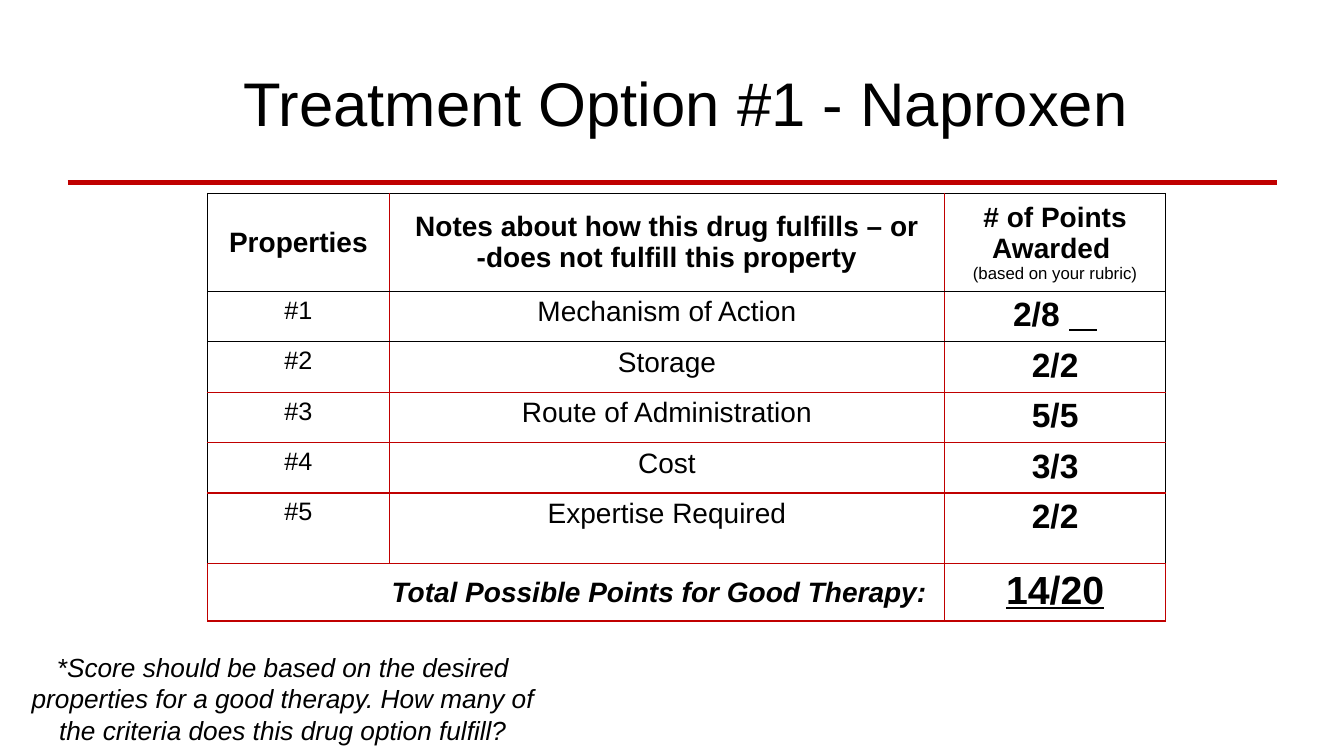
import pptx
import pptx.util
import pptx.dml.color
import pptx.enum.shapes
import pptx.enum.text
import pptx.oxml
import pptx.oxml.ns
import lxml.etree

Inches = pptx.util.Inches
ALIGN = pptx.enum.text.PP_ALIGN
ANCHOR = pptx.enum.text.MSO_ANCHOR
COLORS = {"text": "000000", "accent": "C00000"}


def add_run(paragraph, text, size, bold=False, italic=False, underline=False, align=ALIGN.CENTER):
    paragraph.alignment = align
    run = paragraph.add_run()
    run.text = text
    run.font.name = "Arial"
    run.font.size = pptx.util.Pt(size)
    run.font.bold = bold
    run.font.italic = italic
    run.font.underline = underline
    run.font.color.rgb = pptx.dml.color.RGBColor.from_string(COLORS["text"])


def add_border(cell, side, color):
    properties = cell._tc.get_or_add_tcPr()
    line = lxml.etree.SubElement(properties, pptx.oxml.ns.qn("a:" + side), w="12700")
    fill = lxml.etree.SubElement(line, pptx.oxml.ns.qn("a:solidFill"))
    lxml.etree.SubElement(fill, pptx.oxml.ns.qn("a:srgbClr"), val=COLORS[color])


presentation = pptx.Presentation()
presentation.slide_width = Inches(13.33)
presentation.slide_height = Inches(7.5)
slide = presentation.slides.add_slide(presentation.slide_layouts[6])

rule = slide.shapes.add_connector(
    pptx.enum.shapes.MSO_CONNECTOR.STRAIGHT, Inches(0.67), Inches(1.81), Inches(12.67), Inches(1.81))
rule.line.color.rgb = pptx.dml.color.RGBColor.from_string(COLORS["accent"])
rule.line.width = pptx.util.Pt(3)
lxml.etree.SubElement(rule._element.spPr, pptx.oxml.ns.qn("a:effectLst"))

text_boxes = [
    (1.41, 0.57, 10.79, 0.88, ANCHOR.MIDDLE, "Treatment Option #1 - Naproxen", 44, False),
    (0.12, 6.41, 5.37, 1.05, ANCHOR.TOP,
     "*Score should be based on the desired properties for a good therapy. "
     "How many of the criteria does this drug option fulfill?", 18.7, True),
]
for left, top, width, height, anchor, text, size, italic in text_boxes:
    text_box = slide.shapes.add_textbox(Inches(left), Inches(top), Inches(width), Inches(height))
    text_box.text_frame.word_wrap = True
    text_box.text_frame.vertical_anchor = anchor
    add_run(text_box.text_frame.paragraphs[0], text, size, italic=italic)

row_heights = [0.97, 0.5, 0.5, 0.5, 0.5, 0.7, 0.57]
column_widths = [1.8, 5.51, 2.19]
table = slide.shapes.add_table(
    len(row_heights), len(column_widths), Inches(2.06), Inches(1.92),
    Inches(sum(column_widths)), Inches(sum(row_heights))).table
table.first_row = False
table.horz_banding = False
for row, height in zip(table.rows, row_heights):
    row.height = Inches(height)
for column, width in zip(table.columns, column_widths):
    column.width = Inches(width)

last_row = len(row_heights) - 1
last_column = len(column_widths) - 1
for row_index in range(last_row + 1):
    for column_index in range(last_column + 1):
        cell = table.cell(row_index, column_index)
        body = row_index < last_row
        add_border(cell, "lnL", "text" if column_index == 0 and body else "accent")
        add_border(cell, "lnR", "text" if column_index == last_column and body else "accent")
        add_border(cell, "lnT", "text" if row_index <= 2 else "accent")
        add_border(cell, "lnB", "text" if row_index <= 1 else "accent")
        cell.fill.background()

headings = [
    "Properties",
    "Notes about how this drug fulfills – or -does not fulfill this property",
    "# of Points Awarded ",
]
for column_index, heading in enumerate(headings):
    cell = table.cell(0, column_index)
    cell.vertical_anchor = ANCHOR.MIDDLE
    add_run(cell.text_frame.paragraphs[0], heading, 20, bold=True)
add_run(table.cell(0, last_column).text_frame.add_paragraph(), "(based on your rubric)", 12)

scores = [
    ("Mechanism of Action", "2/8 "),
    ("Storage", "2/2"),
    ("Route of Administration", "5/5"),
    ("Cost", "3/3"),
    ("Expertise Required", "2/2"),
]
for number, (criterion, points) in enumerate(scores, start=1):
    paragraphs = [table.cell(number, index).text_frame.paragraphs[0] for index in range(3)]
    add_run(paragraphs[0], f"#{number}", 18)
    add_run(paragraphs[1], criterion, 20)
    add_run(paragraphs[2], points, 24, bold=True)
add_run(table.cell(1, last_column).text_frame.paragraphs[0], "   ", 24, bold=True, underline=True)

total_label = table.cell(last_row, 0)
total_label.merge(table.cell(last_row, 1))
total_label.vertical_anchor = ANCHOR.MIDDLE
add_run(total_label.text_frame.paragraphs[0], "Total Possible Points for Good Therapy: ", 20,
        bold=True, italic=True, align=ALIGN.RIGHT)
add_run(table.cell(last_row, last_column).text_frame.paragraphs[0], "14/20", 28,
        bold=True, underline=True)

presentation.save("out.pptx")
